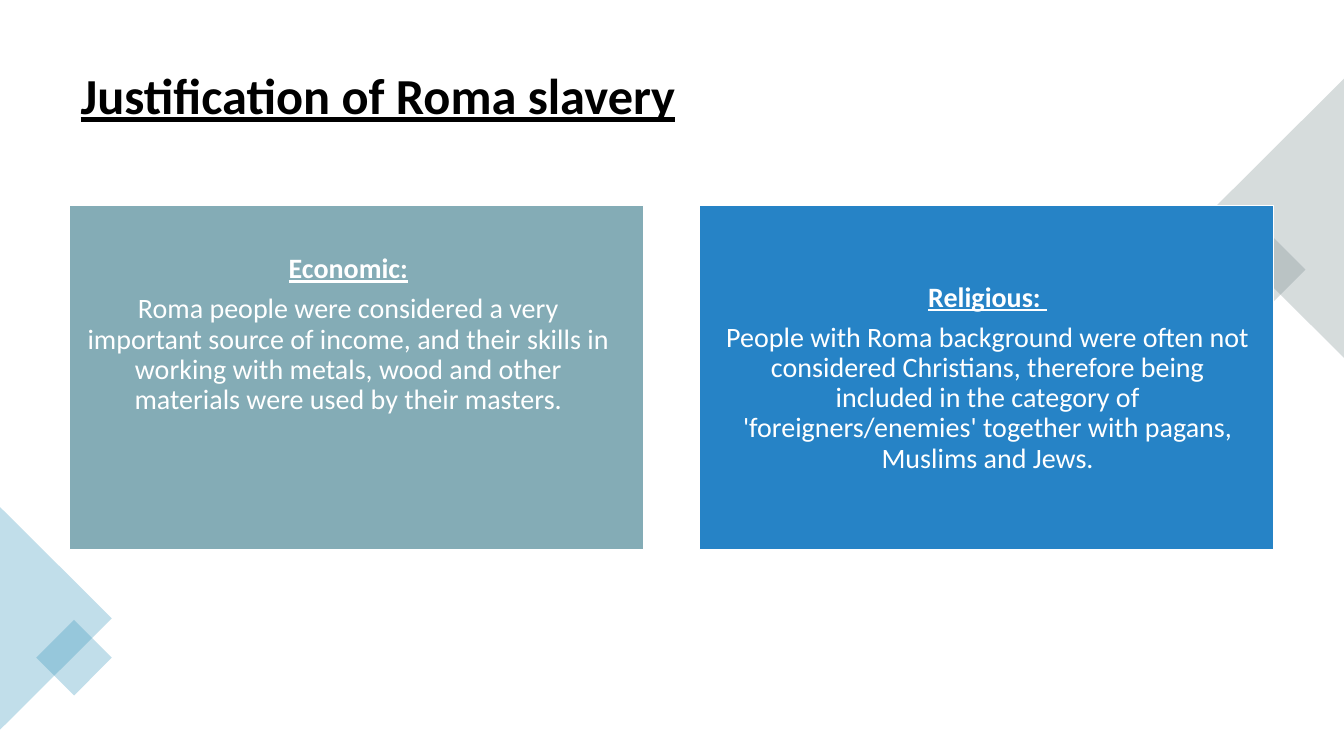
from pptx import Presentation
from pptx.dml.color import RGBColor
from pptx.enum.shapes import MSO_SHAPE
from pptx.enum.text import MSO_ANCHOR, MSO_AUTO_SIZE, PP_ALIGN
from pptx.oxml.ns import qn
from pptx.util import Inches, Pt
from lxml.etree import SubElement

SLIDE_WIDTH, SLIDE_HEIGHT = Inches(13.33), Inches(7.5)
FONT = "Calibri"
COLOURS = {
    "title": "000000",
    "white": "FFFFFF",
    "economic": "84ACB6",
    "religious": "2683C6",
    "grey": "7A8C8E",
    "teal": "3494BA",
}
CARD_TOP, CARD_WIDTH, CARD_HEIGHT = 27.2, 42.69, 45.47

# Card left, fill, text left, text top, text width, heading, body
CARDS = [
    (5.18, "economic", 5.7, 21.6, 40.44, "Economic:",
     "Roma people were considered a very important source of income, and "
     "their skills in working with metals, wood and other materials were "
     "used by their masters."),
    (52.06, "religious", 53.04, 27.33, 40.89, "Religious: ",
     "People with Roma background were often not considered Christians, "
     "therefore being included in the category of 'foreigners/enemies' "
     "together with pagans, Muslims and Jews."),
]

# Preset, centre x, centre y, width, height, rotation, colour
DECORATIONS = [
    (MSO_SHAPE.RECTANGLE, 93.36, 35.67, 5.33, 9.47, 45, "grey"),
    (MSO_SHAPE.ISOSCELES_TRIANGLE, 94.79, 28.87, 20.78, 18.53, 270, "grey"),
    (MSO_SHAPE.ISOSCELES_TRIANGLE, 4.16, 81.8, 16.58, 14.8, 90, "teal"),
    (MSO_SHAPE.RECTANGLE, 5.51, 87, 3.98, 7.07, 45, "teal"),
]


def colour(name):
    return RGBColor.from_string(COLOURS[name])


def area(left, top, width, height):
    """Turn percentages of the slide's width and height into lengths."""
    return (int(SLIDE_WIDTH * left / 100), int(SLIDE_HEIGHT * top / 100),
            int(SLIDE_WIDTH * width / 100), int(SLIDE_HEIGHT * height / 100))


def style_paragraph(paragraph, size, colour_name, emphasis, alignment):
    """Format a paragraph; emphasis makes it bold and underlined."""
    paragraph.alignment = alignment
    paragraph.line_spacing = 0.9
    for span in paragraph.runs:
        span.font.name = FONT
        span.font.size = Pt(size)
        span.font.color.rgb = colour(colour_name)
        span.font.bold = span.font.underline = emphasis


def add_title(page, text):
    title = page.shapes.title
    title.left, title.top, title.width, title.height = area(5.25, 4.67, 89.5, 16.53)
    frame = title.text_frame
    frame.text = text
    frame.auto_size = MSO_AUTO_SIZE.NONE
    frame.vertical_anchor = MSO_ANCHOR.MIDDLE
    style_paragraph(frame.paragraphs[0], 36, "title", True, PP_ALIGN.LEFT)


def add_filled_shape(page, preset, place, fill):
    shape = page.shapes.add_shape(preset, *place)
    shape.shadow.inherit = False
    shape.fill.solid()
    shape.fill.fore_color.rgb = colour(fill)
    return shape


def add_decoration(page, preset, centre_x, centre_y, width, height, rotation, fill):
    place = area(centre_x - width / 2, centre_y - height / 2, width, height)
    shape = add_filled_shape(page, preset, place, fill)
    shape.rotation = rotation
    shape.line.fill.background()
    fill_colour = shape.fill._xPr.find(qn("a:solidFill"))[0]
    SubElement(fill_colour, qn("a:alpha"), val="30000")


def add_card(page, left, fill, text_left, text_top, text_width, heading, body):
    place = area(left, CARD_TOP, CARD_WIDTH, CARD_HEIGHT)
    card = add_filled_shape(page, MSO_SHAPE.RECTANGLE, place, fill)
    card.line.color.rgb = colour("white")
    card.line.width = Pt(1)

    box = page.shapes.add_textbox(*area(text_left, text_top, text_width, CARD_HEIGHT))
    frame = box.text_frame
    frame.word_wrap = True
    frame.vertical_anchor = MSO_ANCHOR.MIDDLE
    frame.margin_left = frame.margin_right = Inches(0.08)
    frame.margin_top = frame.margin_bottom = Inches(0.08)
    frame.text = f"{heading}\n{body}"
    for paragraph, emphasis in zip(frame.paragraphs, (True, False)):
        style_paragraph(paragraph, 20, "white", emphasis, PP_ALIGN.CENTER)
        paragraph.space_after = Pt(7)


def main():
    deck = Presentation()
    deck.slide_width, deck.slide_height = SLIDE_WIDTH, SLIDE_HEIGHT
    page = deck.slides.add_slide(deck.slide_layouts[5])
    add_title(page, "Justification of Roma slavery")
    for decoration in DECORATIONS:
        add_decoration(page, *decoration)
    for card in CARDS:
        add_card(page, *card)
    deck.save("out.pptx")


if __name__ == "__main__":
    main()
